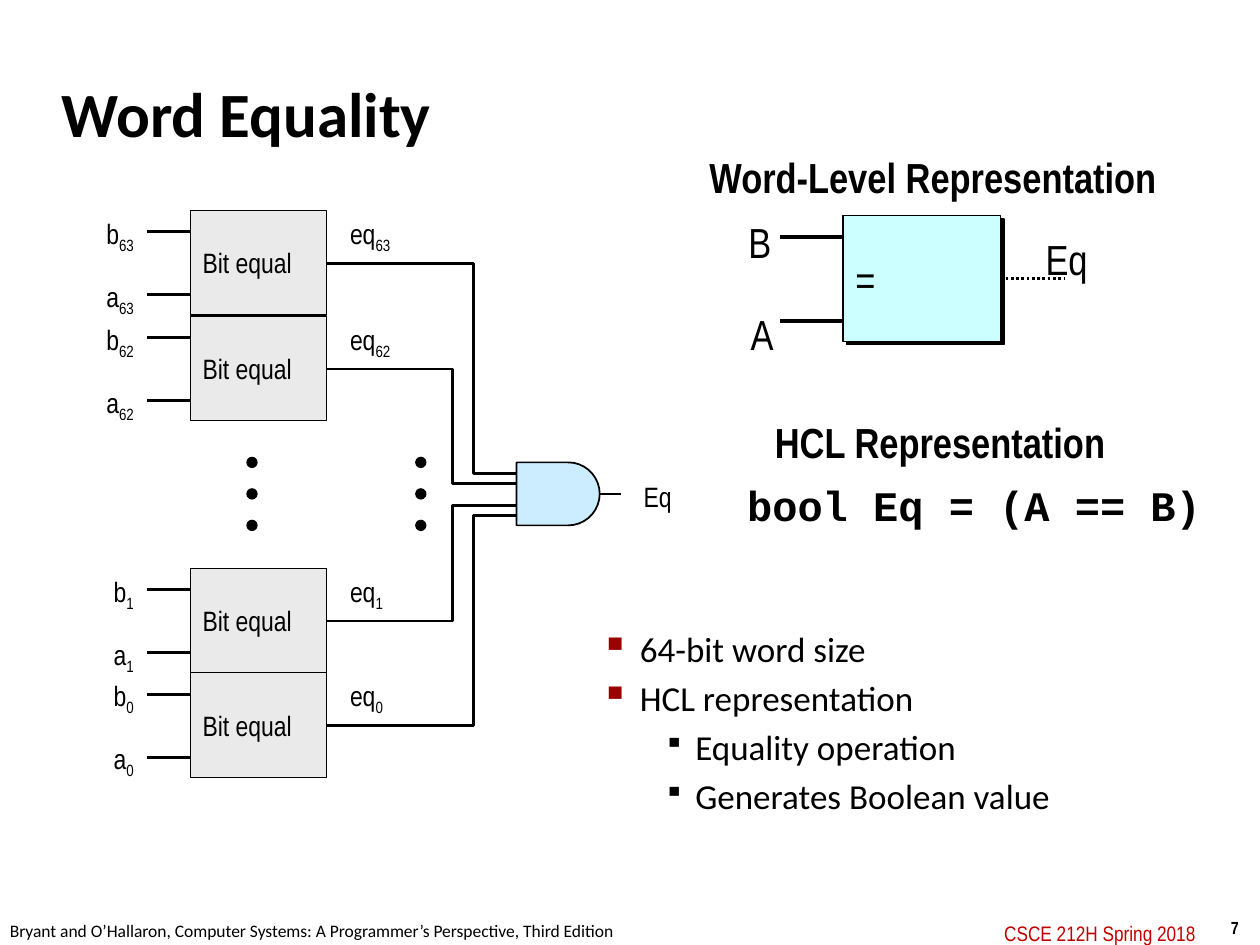
import math

from lxml import etree
from pptx import Presentation
from pptx import util as u
from pptx.dml import color
from pptx.enum import dml, shapes, text
from pptx.oxml import ns

NARROW, BODY, CODE = "Arial Narrow", "Calibri", "Courier New"
BLACK, RED = "000000", "C00000"
LEFT, RIGHT = text.PP_ALIGN.LEFT, text.PP_ALIGN.RIGHT
TOP, MIDDLE = text.MSO_ANCHOR.TOP, text.MSO_ANCHOR.MIDDLE


def rgb(value):
    return color.RGBColor.from_string(value)


def add_xml(parent, tag, **attributes):
    child = etree.SubElement(parent, ns.qn(tag))
    for name, value in attributes.items():
        child.set(name, str(value))
    return child


class Diagram:
    """Holds the slide and the common style of its elements."""

    def __init__(self, slide):
        self.slide = slide

    def add_words(self, paragraph, words, subscript="", align=LEFT, **formats):
        paragraph.alignment = align
        formats = {"name": NARROW, "size": u.Pt(16), **formats}
        ink = formats.pop("ink", BLACK)
        for part in filter(None, (words, subscript)):
            run = paragraph.add_run()
            run.text = part
            for name, value in formats.items():
                setattr(run.font, name, value)
            run.font.color.rgb = rgb(ink)
        if subscript:
            run._r.get_or_add_rPr().set("baseline", "-25000")

    def frame(self, shape, anchor=TOP, wrap=False, inset=0.1):
        settings = {
            "word_wrap": wrap, "vertical_anchor": anchor,
            "margin_left": u.Inches(inset), "margin_right": u.Inches(inset),
            "margin_top": u.Inches(0.05), "margin_bottom": u.Inches(0.05),
        }
        for name, value in settings.items():
            setattr(shape.text_frame, name, value)
        return shape.text_frame

    def label(self, box, words, subscript="", anchor=TOP, inset=0.1, **formats):
        shape = self.slide.shapes.add_textbox(*map(u.Inches, box))
        frame = self.frame(shape, anchor, inset=inset)
        frame.auto_size = text.MSO_AUTO_SIZE.SHAPE_TO_FIT_TEXT
        self.add_words(frame.paragraphs[0], words, subscript, **formats)

    def paint(self, shape, fill, width):
        shape.shadow.inherit = False
        if fill:
            shape.fill.solid()
            shape.fill.fore_color.rgb = rgb(fill)
        else:
            shape.fill.background()
        shape.line.color.rgb = rgb(BLACK)
        shape.line.width = u.Pt(width)
        return shape

    def shape(self, kind, box, fill):
        return self.paint(self.slide.shapes.add_shape(kind, *map(u.Inches, box)), fill, 0.75)

    def block(self, box, words, fill, **formats):
        shape = self.shape(shapes.MSO_SHAPE.RECTANGLE, box, fill)
        self.add_words(self.frame(shape, MIDDLE).paragraphs[0], words, **formats)
        return shape

    def outline(self, points, fill=None, width=1.5):
        start, *rest = [(u.Inches(x), u.Inches(y)) for x, y in points]
        builder = self.slide.shapes.build_freeform(*start)
        builder.add_line_segments(rest, close=fill is not None)
        return self.paint(builder.convert_to_shape(), fill, width)

    def line(self, start, end, width=1.5):
        connector = self.slide.shapes.add_connector(
            shapes.MSO_CONNECTOR.STRAIGHT, *map(u.Inches, (*start, *end)))
        connector.line.color.rgb = rgb(BLACK)
        connector.line.width = u.Pt(width)
        add_xml(connector._element.spPr, "a:effectLst")
        return connector

    def bullets(self, box, items):
        frame = self.frame(self.slide.shapes.add_textbox(*map(u.Inches, box)), wrap=True)
        for index, (level, words) in enumerate(items):
            paragraph = frame.add_paragraph() if index else frame.paragraphs[0]
            paragraph.level = level
            paragraph.space_before = u.Pt(4 if index else 0)
            margin, hang, percent, ink = BULLETS[level]
            properties = paragraph._p.get_or_add_pPr()
            properties.set("marL", str(u.Inches(margin)))
            properties.set("indent", str(-u.Inches(hang)))
            add_xml(add_xml(properties, "a:buClr"), "a:srgbClr", val=ink)
            add_xml(properties, "a:buSzPct", val=percent * 1000)
            add_xml(properties, "a:buChar", char="▪")
            self.add_words(paragraph, words, name=BODY, size=u.Pt(20))


# Margin, hanging indent, size in percent and colour of each bullet level
BULLETS = {1: (0.81, 0.31, 110, "990000"), 2: (1.25, 0.25, 80, BLACK)}

# Bit index, top of the block, bend of the wire, height of the gate input
BITS = [("63", 1.67, 3.76, 3.76), ("62", 2.51, 3.59, 3.84),
        ("1", 4.51, 3.59, 4.01), ("0", 5.34, 3.76, 4.09)]


def bit_level(diagram):
    for bit, top, bend, gate_input in BITS:
        diagram.block((1.51, top, 1.08, 0.83), "Bit equal", "EAEAEA")
        width = 0.3 + 0.07 * len(bit)
        for name, offset in (("b", 0), ("a", 0.5)):
            diagram.label((1.16 - width, top + offset, width, 0.37), name, bit, align=RIGHT)
            height = top + offset + 0.17
            diagram.line((1.17, height), (1.51, height))
        diagram.label((2.68, top, 0.66, 0.37), "eq", bit)
        output = top + 0.42
        diagram.outline([(2.59, output), (bend, output), (bend, gate_input), (4.1, gate_input)])

    # Dots for the bits left out
    for left in (1.96, 3.3):
        for row in range(3):
            diagram.shape(shapes.MSO_SHAPE.OVAL, (left, 3.63 + row * 0.25, 0.08, 0.08), BLACK)

    # AND gate
    diagram.line((4.76, 3.92), (4.93, 3.92))
    angles = [math.radians(degrees) for degrees in range(-90, 91, 10)]
    arc = [(4.51 + 0.25 * math.cos(a), 3.92 + 0.25 * math.sin(a)) for a in angles]
    diagram.outline([(4.1, 3.67), *arc, (4.1, 4.17)], "CCECFF", 1)
    diagram.label((5.01, 3.76, 0.66, 0.37), "Eq")


def word_level(diagram):
    large = {"size": u.Pt(24)}
    box = diagram.block((6.69, 1.71, 1.25, 1), "=", "CCFFFF", **large)
    effects = box._element.spPr.find(ns.qn("a:effectLst"))
    shadow = add_xml(effects, "a:outerShdw", dist=u.Pt(2.8), dir=45 * 60000,
                     algn="ctr", rotWithShape=0)
    add_xml(shadow, "a:srgbClr", val=BLACK)
    for height in (1.88, 2.55):
        diagram.line((6.19, height), (6.69, height), 2.25)
    output = diagram.line((7.94, 2.21), (8.45, 2.21))
    output.begin_connect(box, 3)
    output.line.dash_style = dml.MSO_LINE.ROUND_DOT
    for words, left, top, width in (("B", 5.84, 1.67, 0.39), ("A", 5.86, 2.4, 0.39),
                                    ("Eq", 8.2, 1.8, 0.54)):
        diagram.label((left, top, width, 0.51), words, **large)

    # Headings and HCL expression
    for words, left, top, width, font in (
            ("Word-Level Representation", 5.58, 1.15, 3.69, NARROW),
            ("bool Eq = (A == B)", 5.88, 3.76, 3.74, CODE),
            ("HCL Representation", 6.1, 3.26, 2.76, NARROW)):
        diagram.label((left, top, width, 0.51), words, inset=0.05, name=font, bold=True, **large)


def main():
    presentation = Presentation()
    presentation.slide_width, presentation.slide_height = u.Inches(10), u.Inches(7.5)
    slide = presentation.slides.add_slide(presentation.slide_layouts[5])
    diagram = Diagram(slide)

    # Footer
    diagram.label((9.67, 7.23, 0.34, 0.27), "7", size=u.Pt(10), bold=True)
    diagram.label((-0.02, 7.25, 5.08, 0.27), "Bryant and O’Hallaron, Computer Systems: "
                  "A Programmer’s Perspective, Third Edition", name=BODY, size=u.Pt(10))
    diagram.label((7.92, 7.26, 1.64, 0.3), "CSCE 212H Spring 2018", anchor=MIDDLE,
                  inset=0.05, size=u.Pt(12), ink=RED)

    # Title
    title = slide.shapes.title
    for name, value in zip(("left", "top", "width", "height"), (0.39, 0.48, 8.3, 0.83)):
        setattr(title, name, u.Inches(value))
    diagram.add_words(diagram.frame(title, MIDDLE, wrap=True).paragraphs[0], "Word Equality",
                      name=BODY, size=u.Pt(36), bold=True)

    # Body and diagrams
    diagram.bullets((4.17, 4.93, 5.23, 2.12), [
        (1, "64-bit word size"), (1, "HCL representation"),
        (2, "Equality operation"), (2, "Generates Boolean value")])
    bit_level(diagram)
    word_level(diagram)
    presentation.save("out.pptx")


if __name__ == "__main__":
    main()
